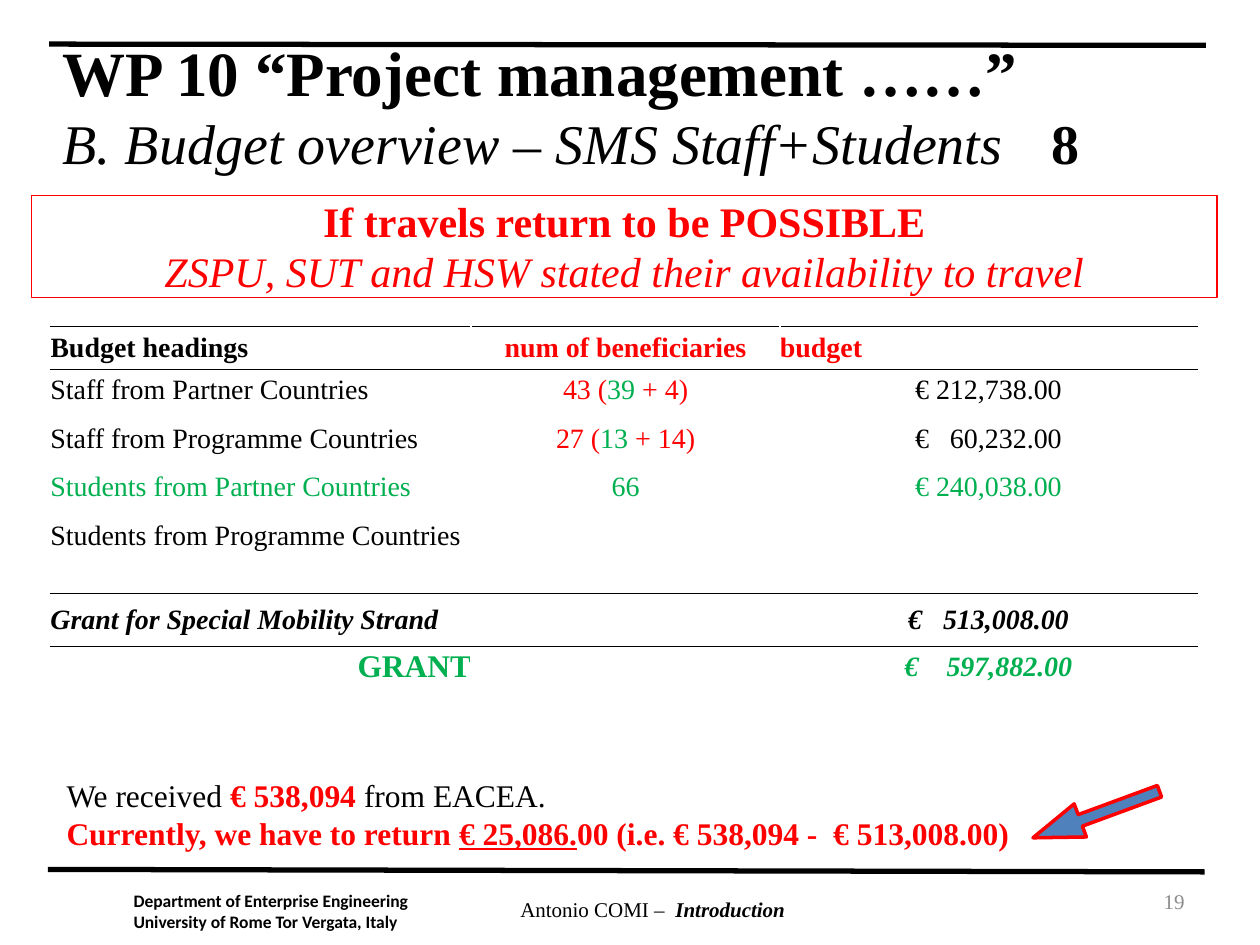
import pptx
import pptx.util
import pptx.dml.color
import pptx.enum.shapes
import pptx.enum.text
import pptx.oxml.ns
import lxml.etree

Inches, Pt = pptx.util.Inches, pptx.util.Pt
Align, Anchor = pptx.enum.text.PP_ALIGN, pptx.enum.text.MSO_ANCHOR
Shape = pptx.enum.shapes.MSO_SHAPE
BLACK, RED, GREEN, GREY, WHITE, BLUE = "000000", "FF0000", "00B050", "8C8C8C", "FFFFFF", "4F81BD"


def tint(code):
    return pptx.dml.color.RGBColor.from_string(code)


def node(base, tag, **attrs):
    return lxml.etree.SubElement(base, pptx.oxml.ns.qn(tag), **attrs)


class Deck:
    """Holds the text style and the slide being built."""

    def __init__(self, slide, font="Times New Roman"):
        self.slide, self.font = slide, font

    def label(self, frame, lines, size, align=Align.LEFT, anchor=Anchor.TOP, inset=None, font=None):
        frame.word_wrap = True
        frame.vertical_anchor = anchor
        if inset is not None:
            frame.margin_left = frame.margin_right = Inches(inset)
            frame.margin_top = frame.margin_bottom = Inches(inset)
        for i, runs in enumerate(lines):
            par = frame.paragraphs[0] if i == 0 else frame.add_paragraph()
            self.fill(par, runs, size, align, font)

    def fill(self, par, runs, size, align, font=None):
        par.alignment = align
        for words, color, marks in runs:
            run = par.add_run()
            run.text = words
            face = run.font
            face.name, face.size = font or self.font, Pt(size)
            face.color.rgb = tint(color)
            face.bold, face.italic, face.underline = (m in marks for m in "biu")

    def text(self, box, lines, size, **style):
        shape = self.slide.shapes.add_textbox(*map(Inches, box))
        self.label(shape.text_frame, lines, size, **style)
        return shape

    def shape(self, kind, box, fill, line=None, width=0.75):
        shape = self.slide.shapes.add_shape(kind, *map(Inches, box))
        shape.shadow.inherit = False
        shape.fill.solid()
        shape.fill.fore_color.rgb = tint(fill)
        if line:
            shape.line.color.rgb = tint(line)
            shape.line.width = Pt(width)
        else:
            shape.line.fill.background()
        return shape

    def line(self, start, end):
        rule = self.slide.shapes.add_connector(
            pptx.enum.shapes.MSO_CONNECTOR.STRAIGHT, *map(Inches, start + end))
        rule.line.color.rgb = tint(BLACK)
        rule.line.width = Pt(3)
        node(rule._element.spPr, "a:effectLst")

    def table(self, box, cols, highs, rows, ruled):
        grid = self.slide.shapes.add_table(len(rows), len(cols), *map(Inches, box)).table
        grid.first_row = grid.horz_banding = False
        for col, wide in zip(grid.columns, cols):
            col.width = Inches(wide)
        for r, (row, high) in enumerate(zip(rows, highs)):
            grid.rows[r].height = Inches(high)
            for c, (runs, align, size) in enumerate(row):
                sides = [s for s, edge in (("T", r - 1), ("B", r)) if edge in ruled]
                self.cell(grid.cell(r, c), runs, align, size, sides)
        return grid

    def cell(self, cell, runs, align, size, sides):
        cell.margin_left = cell.margin_right = cell.margin_top = cell.margin_bottom = 0
        cell.vertical_anchor = Anchor.MIDDLE
        for side in sides:
            edge = node(cell._tc.get_or_add_tcPr(), f"a:ln{side}", w=str(Pt(0.5)))
            node(node(edge, "a:solidFill"), "a:srgbClr", val=BLACK)
        cell.fill.background()
        par = cell.text_frame.paragraphs[0]
        self.fill(par, runs, size, align)
        if not runs:
            node(par._p, "a:endParaRPr", sz="1200")


def entry(words="", color=BLACK, marks="", align=Align.CENTER, size=16):
    return ([(words, color, marks)] if words else [], align, size)


def head(words, color=BLACK, marks=""):
    return entry(words, color, marks, Align.LEFT)


def count(total, done, left):
    runs = [(f"{total} (", RED, ""), (done, GREEN, ""), (f" + {left})", RED, "")]
    return (runs, Align.CENTER, 16)


def main():
    show = pptx.Presentation()
    show.slide_width, show.slide_height = Inches(10), Inches(7.5)
    deck = Deck(show.slides.add_slide(show.slide_layouts[6]))

    deck.line((0.38, 6.9), (9.56, 6.92))
    deck.line((0.39, 0.35), (9.57, 0.36))
    deck.text((1.06, 7.06, 2.58, 0.33),
              [[("Department of Enterprise Engineering", BLACK, "b")],
               [("University of Rome Tor Vergata, Italy", BLACK, "b")]],
              10, inset=0, font="Calibri")
    deck.text((3.19, 7.07, 3.98, 0.5),
              [[("Antonio COMI –  ", BLACK, ""), ("Introduction", BLACK, "bi")]],
              12, align=Align.CENTER)
    deck.text((7.17, 6.95, 2.33, 0.4), [[("19", GREY, "")]], 12,
              align=Align.RIGHT, anchor=Anchor.MIDDLE)

    title = deck.text((0.4, 0.43, 9.16, 0.8),
                      [[("WP 10 “Project management ……”", BLACK, "b")]], 36, anchor=Anchor.MIDDLE)
    par = title.text_frame.paragraphs[0]
    node(node(par._p.get_or_add_pPr(), "a:tabLst"), "a:tab", pos=str(Inches(7.85)), algn="l")
    par.add_line_break()
    deck.fill(par, [("B. Budget overview – SMS Staff+Students \t", BLACK, "i"),
                    ("8", BLACK, "b")], 32, Align.LEFT)

    blank = [entry()] * 3
    rows = [
        blank,
        [head("Budget headings", BLACK, "b"), entry("num of beneficiaries", RED, "b"),
         head("budget", RED, "b")],
        [head("Staff from Partner Countries"), count("43", "39", "4"), entry(" € 212,738.00 ")],
        [head("Staff from Programme Countries"), count("27", "13", "14"),
         entry(" €   60,232.00 ")],
        [head("Students from Partner Countries", GREEN), entry("66", GREEN),
         entry(" € 240,038.00 ", GREEN)],
        [head("Students from Programme Countries"), entry(), entry()],
        blank,
        [head("Grant for Special Mobility Strand", BLACK, "bi"), entry(),
         entry(" €   513,008.00 ", BLACK, "bi")],
        [entry("GRANT", GREEN, "b", Align.RIGHT, 18), entry(),
         entry(" €    597,882.00 ", GREEN, "bi")],
    ]
    highs = [0.24, 0.34, 0.34, 0.43, 0.34, 0.43, 0.24, 0.42, 0.33]
    grid = deck.table((0.4, 2.35, 9.1, sum(highs)), [3.34, 2.45, 3.31], highs, rows, {0, 1, 6, 7})
    grid.cell(0, 0).merge(grid.cell(0, 2))

    note = deck.shape(Shape.RECTANGLE, (0.25, 1.55, 9.41, 0.81), WHITE, RED)
    deck.label(note.text_frame,
               [[("If travels return to be POSSIBLE", RED, "b")],
                [("ZSPU, SUT and HSW stated their availability to travel", RED, "i")]],
               24, align=Align.CENTER, inset=0)
    funds = deck.shape(Shape.RECTANGLE, (0.43, 6.11, 9.37, 0.71), WHITE)
    deck.label(funds.text_frame,
               [[("We received ", BLACK, ""), ("€ 538,094 ", RED, "b"), ("from EACEA.", BLACK, "")],
                [("Currently, we have to return ", RED, "b"), ("€ 25,086.", RED, "bu"),
                 ("00 (i.e. € 538,094 -  € 513,008.00)", RED, "b")]], 18)

    arrow = deck.shape(Shape.DOWN_ARROW, (8.56, 5.93, 0.28, 1.07), BLUE, RED, 2)
    arrow.adjustments[0], arrow.adjustments[1] = 0.35, 1.43
    arrow.rotation = 69.8
    show.save("out.pptx")


if __name__ == "__main__":
    main()
